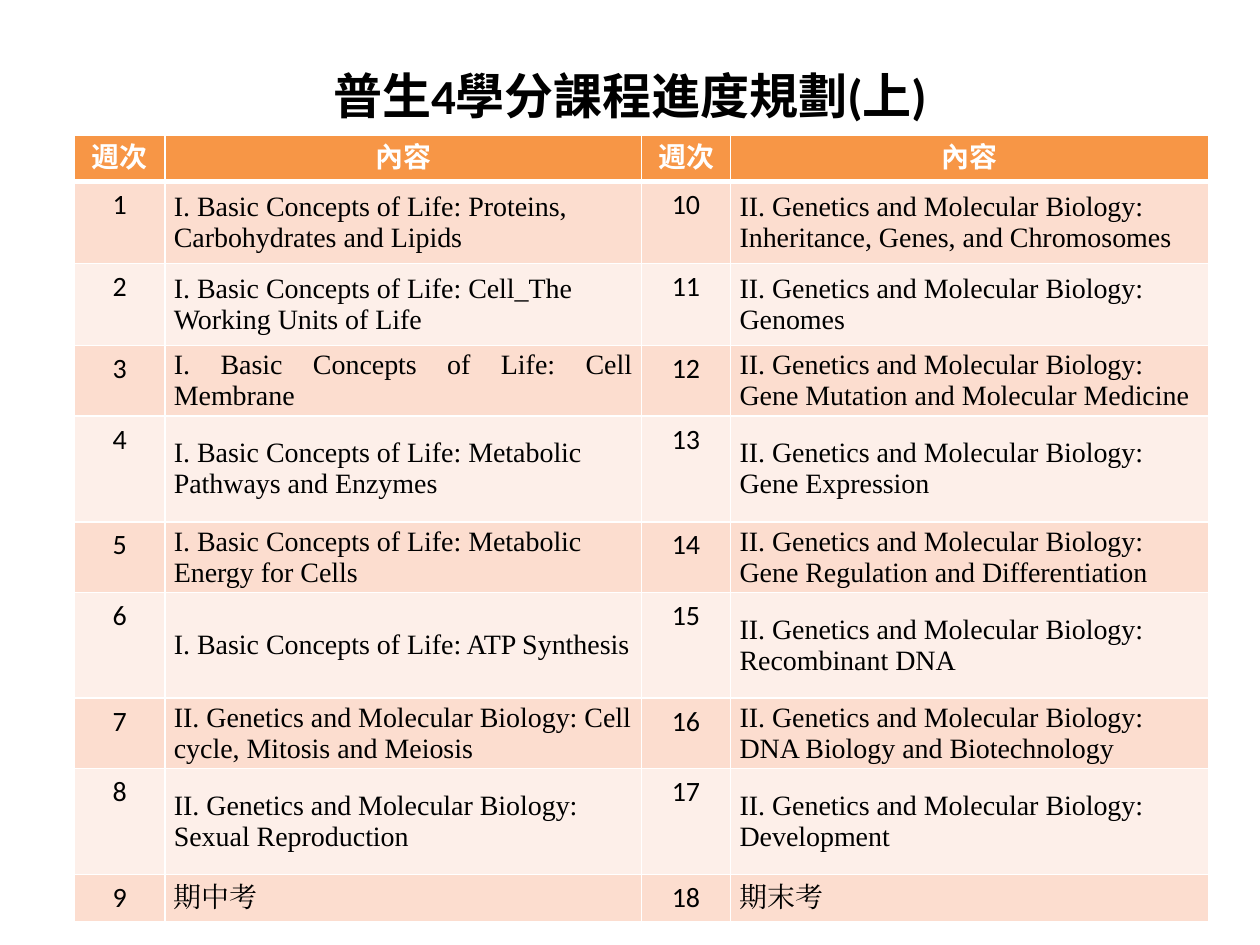
"""Build the first-semester course schedule slide."""
from lxml.etree import SubElement
from pptx import Presentation
from pptx.dml.color import RGBColor
from pptx.enum.text import MSO_ANCHOR as ANCHOR, PP_ALIGN as ALIGN
from pptx.oxml.ns import qn
from pptx.util import Inches, Pt

TITLE = "普生4學分課程進度規劃(上)"
HEADER = ["週次", "內容"]
LIFE = "I. Basic Concepts of Life: "
GENETICS = "II. Genetics and Molecular Biology: "
TOPICS = [
    LIFE + "Proteins, Carbohydrates and Lipids",
    LIFE + "Cell_The Working Units of Life",
    LIFE + "Cell Membrane",
    LIFE + "Metabolic Pathways and Enzymes",
    LIFE + "Metabolic Energy for Cells",
    LIFE + "ATP Synthesis",
    GENETICS + "Cell cycle, Mitosis and Meiosis",
    GENETICS + "Sexual Reproduction",
    "期中考",
    GENETICS + "Inheritance, Genes, and Chromosomes",
    GENETICS + "Genomes",
    GENETICS + "Gene Mutation and Molecular Medicine",
    GENETICS + "Gene Expression",
    GENETICS + "Gene Regulation and Differentiation",
    GENETICS + "Recombinant DNA",
    GENETICS + "DNA Biology and Biotechnology",
    GENETICS + "Development",
    "期末考",
]
JUSTIFIED_WEEK = 3
COL_WIDTHS = [0.72, 3.78, 0.71, 3.79]
ROW_HEIGHTS = [0.37, 0.65, 0.65, 0.56, 0.84, 0.56, 0.84, 0.56, 0.84, 0.37]
COLORS = {"header": "F79646", "odd": "FCDDCF", "even": "FDEFE9",
          "white": "FFFFFF", "black": "000000"}


def write(tf, text, size=16, font="Calibri", color="black", bold=False, align=ALIGN.CENTER):
    p = tf.paragraphs[0]
    p.alignment = align
    r = p.add_run()
    r.text = text
    r.font.size = Pt(size)
    r.font.name = font
    r.font.bold = bold
    r.font.color.rgb = RGBColor.from_string(COLORS[color])
    r_pr = r.font._element
    for tag in ("a:ea", "a:cs"):
        SubElement(r_pr, qn(tag), typeface=font)


def style_cell(cell, row):
    tc_pr = cell._tc.get_or_add_tcPr()
    widths = {"L": 1, "R": 1, "T": 3 if row == 1 else 1, "B": 3 if row == 0 else 1}
    for side, width in widths.items():
        ln = SubElement(tc_pr, qn(f"a:ln{side}"), w=str(Pt(width)))
        fill = SubElement(ln, qn("a:solidFill"))
        SubElement(fill, qn("a:srgbClr"), val=COLORS["white"])
    name = "header" if row == 0 else "odd" if row % 2 else "even"
    cell.fill.solid()
    cell.fill.fore_color.rgb = RGBColor.from_string(COLORS[name])


def write_topic(cell, text, align):
    cell.vertical_anchor = ANCHOR.MIDDLE
    cell.margin_left = cell.margin_right = Inches(0.07)
    cell.margin_top = cell.margin_bottom = 0
    write(cell.text_frame, text, font="Times New Roman", align=align)


def add_schedule(s):
    table = s.shapes.add_table(len(ROW_HEIGHTS), len(COL_WIDTHS), Inches(0.59), Inches(1.07),
                               Inches(sum(COL_WIDTHS)), Inches(sum(ROW_HEIGHTS))).table
    for col, width in zip(table.columns, COL_WIDTHS):
        col.width = Inches(width)
    for row, height in zip(table.rows, ROW_HEIGHTS):
        row.height = Inches(height)
    weeks_per_half = len(TOPICS) // 2
    for row in range(len(ROW_HEIGHTS)):
        for col in range(len(COL_WIDTHS)):
            cell = table.cell(row, col)
            style_cell(cell, row)
            half, is_topic = divmod(col, 2)
            week = row + half * weeks_per_half
            if row == 0:
                write(cell.text_frame, HEADER[is_topic], color="white", bold=True)
            elif is_topic:
                align = ALIGN.JUSTIFY if week == JUSTIFIED_WEEK else ALIGN.LEFT
                write_topic(cell, TOPICS[week - 1], align)
            else:
                write(cell.text_frame, str(week))


def add_title(s):
    tf = s.shapes.add_textbox(Inches(0.5), Inches(0.44), Inches(9), Inches(0.63)).text_frame
    tf.word_wrap = True
    tf.vertical_anchor = ANCHOR.MIDDLE
    write(tf, TITLE, size=28, bold=True)


def main():
    prs = Presentation()
    prs.slide_width, prs.slide_height = Inches(10), Inches(7.5)
    s = prs.slides.add_slide(prs.slide_layouts[6])
    add_schedule(s)
    add_title(s)
    prs.save("out.pptx")


if __name__ == "__main__":
    main()
